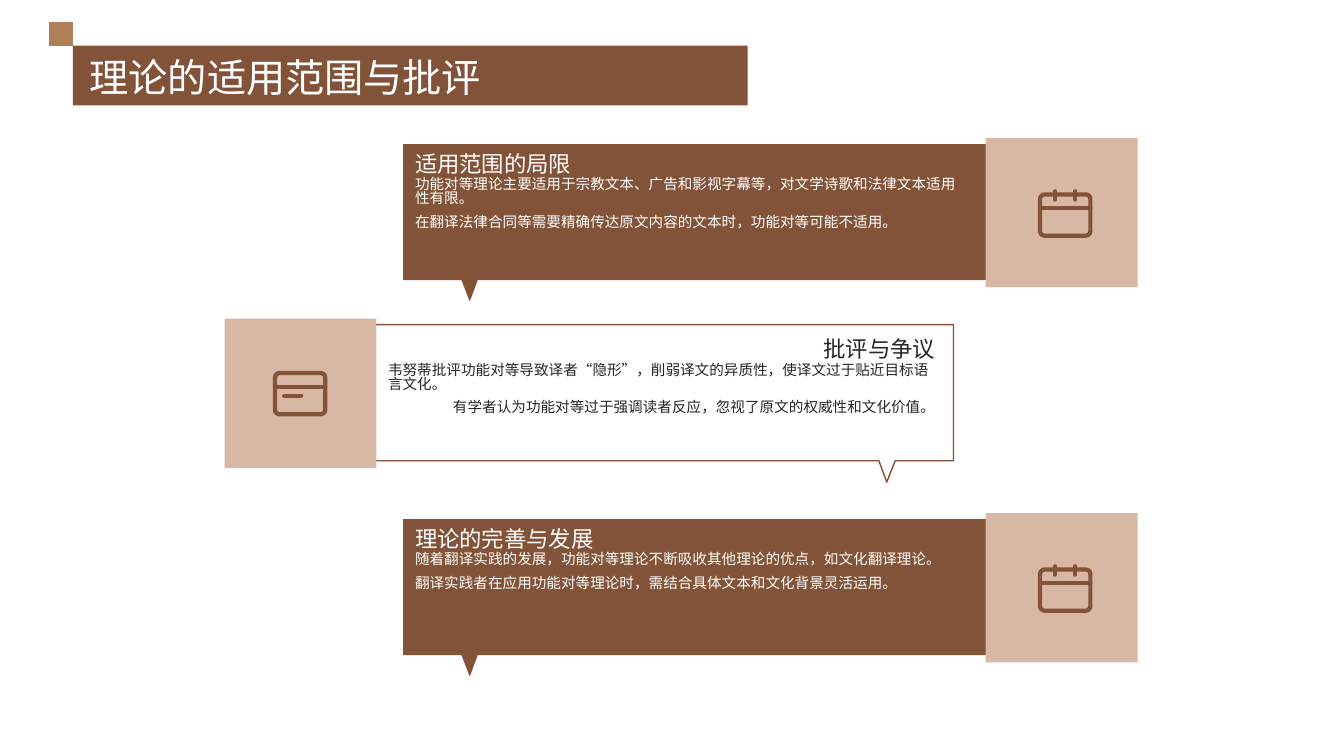
from pptx import Presentation
from pptx.dml.color import RGBColor as Rgb
from pptx.enum.shapes import MSO_CONNECTOR as Link, MSO_SHAPE as Form
from pptx.enum.text import MSO_ANCHOR as Anchor, PP_ALIGN as Align
from pptx.oxml.ns import qn
from pptx.util import Cm, Pt
from lxml.etree import SubElement as Sub

HUES = {"brown": "835339", "tan": "B08159", "rose": "D8B7A5",
        "white": "FFFFFF", "dark": "262626"}
FONT = "Noto Sans CJK SC"
WIDE, HIGH = 18.06, 3.43

CARDS = [
    (3.63, False, "适用范围的局限",
     ["功能对等理论主要适用于宗教文本、广告和影视字幕等，对文学诗歌和法律文本适用性有限。",
      "在翻译法律合同等需要精确传达原文内容的文本时，功能对等可能不适用。"]),
    (8.18, True, "批评与争议",
     ["韦努蒂批评功能对等导致译者“隐形”，削弱译文的异质性，使译文过于贴近目标语言文化。",
      "有学者认为功能对等过于强调读者反应，忽视了原文的权威性和文化价值。"]),
    (13.08, False, "理论的完善与发展",
     ["随着翻译实践的发展，功能对等理论不断吸收其他理论的优点，如文化翻译理论。",
      "翻译实践者在应用功能对等理论时，需结合具体文本和文化背景灵活运用。"]),
]


def hue(name):
    return Rgb.from_string(HUES[name])


def write(frame, lines, size=10.4, color="white", space=1.0, gap=0, sides=(Align.LEFT,)):
    for i, line in enumerate(lines):
        para = frame.paragraphs[0] if i == 0 else frame.add_paragraph()
        para.alignment = sides[min(i, len(sides) - 1)]
        para.line_spacing = space
        para.space_before = Pt(gap if i else 0)
        run = para.add_run()
        run.text = line
        font = run.font
        font.size, font.name = Pt(size), FONT
        font.color.rgb = hue(color)
        Sub(font._element, qn("a:ea")).set("typeface", FONT)


class Deck:
    """Draws styled elements on the current slide."""

    def __init__(self):
        self.show = Presentation()
        self.show.slide_width, self.show.slide_height = Cm(33.87), Cm(19.05)
        self.slide = self.show.slides.add_slide(self.show.slide_layouts[6])
        self.shapes = self.slide.shapes

    def paint(self, shape, fill=None, line=None, width=1):
        shape.shadow.inherit = False
        if fill:
            shape.fill.solid()
            shape.fill.fore_color.rgb = hue(fill)
        else:
            shape.fill.background()
        if line:
            shape.line.color.rgb = hue(line)
            shape.line.width = Pt(width)
        else:
            shape.line.fill.background()
        return shape

    def box(self, x, y, w, h, form=Form.RECTANGLE, **style):
        shape = self.shapes.add_shape(form, Cm(x), Cm(y), Cm(w), Cm(h))
        return self.paint(shape, **style)

    def text(self, x, y, w, h, lines, anchor=Anchor.TOP, **style):
        frame = self.shapes.add_textbox(Cm(x), Cm(y), Cm(w), Cm(h)).text_frame
        frame.word_wrap = True
        frame.vertical_anchor = anchor
        frame.margin_left = frame.margin_right = 0
        frame.margin_top = frame.margin_bottom = 0
        write(frame, lines, **style)

    def bubble(self, x, y, flip, **style):
        dots = [(0, 0), (WIDE, 0), (WIDE, HIGH), (1.88, HIGH),
                (1.68, HIGH + 0.54), (1.47, HIGH), (0, HIGH)]
        dots = [(Cm(x + (WIDE - a if flip else a)), Cm(y + b)) for a, b in dots]
        pen = self.shapes.build_freeform(*dots[0])
        pen.add_line_segments(dots[1:], close=True)
        self.paint(pen.convert_to_shape(), **style)

    def stroke(self, x, y, to_x, to_y):
        line = self.shapes.add_connector(Link.STRAIGHT, Cm(x), Cm(y), Cm(to_x), Cm(to_y))
        line.line.color.rgb = hue("brown")
        line.line.width = Pt(3)
        line.line._get_or_add_ln().set("cap", "rnd")
        Sub(line._element.spPr, qn("a:effectLst"))

    def icon(self, x, y, bank):
        edge = self.box(x, y, 1.27, 1.04, Form.ROUNDED_RECTANGLE, line="brown", width=3)
        edge.adjustments[0] = 0.11
        self.stroke(x, y + 0.35, x + 1.27, y + 0.35)
        if bank:
            self.stroke(x + 0.23, y + 0.57, x + 0.66, y + 0.57)
        else:
            for pin in (0.38, 0.89):
                self.stroke(x + pin, y - 0.08, x + pin, y + 0.13)

    def card(self, top, flip, head, body):
        if flip:
            left, tile, start, wide, drop = 5.97, 5.66, 9.78, 13.79, 0.13
            fill, line, ink = "white", "brown", "dark"
            side, sides = Align.RIGHT, (Align.LEFT, Align.RIGHT)
        else:
            left, tile, start, wide, drop = 10.16, 24.84, 10.46, 13.84, 0
            fill, line, ink = "brown", None, "white"
            side, sides = Align.LEFT, (Align.LEFT,)
        self.bubble(left, top, flip, fill=fill, line=line)
        self.text(start, top + 0.86 + drop, wide, 2.26, body,
                  color=ink, space=0.8, gap=7, sides=sides)
        self.box(tile, top - 0.15, 3.83, 3.76, fill="rose")
        self.icon(tile + (1.27 if flip else 1.37), top + (1.22 if flip else 1.27), flip)
        self.text(start, top + 0.13 + drop, wide, 0.69, [head], Anchor.BOTTOM,
                  size=16, color=ink, space=1.3, sides=(side,))


def main():
    deck = Deck()
    for card in CARDS:
        deck.card(*card)
    deck.box(1.24, 0.56, 0.6, 0.6, fill="tan")
    deck.box(1.84, 1.15, 17, 1.51, fill="brown")
    deck.text(2.26, 1.24, 29.72, 1.3, ["理论的适用范围与批评"], Anchor.MIDDLE,
              size=28, space=1.1)
    deck.show.save("out.pptx")


if __name__ == "__main__":
    main()
